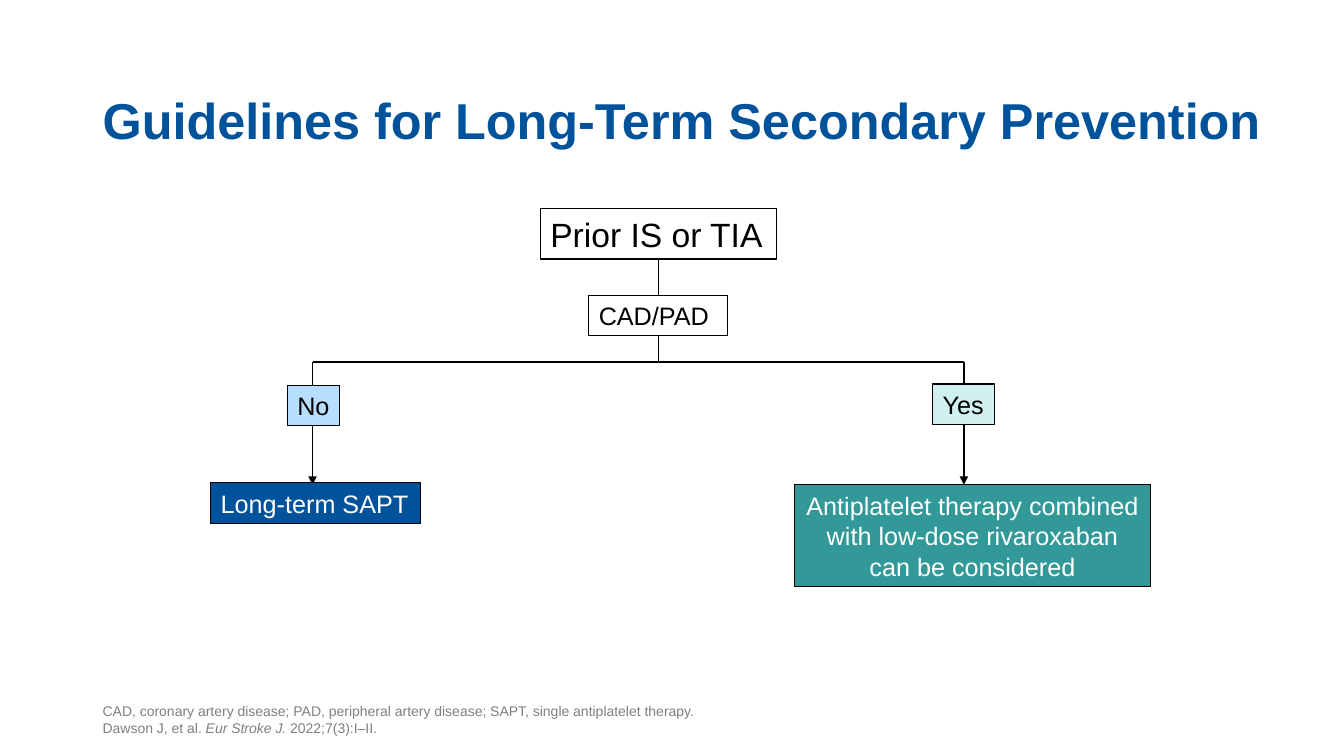
from lxml import etree
from pptx import Presentation
from pptx.dml.color import RGBColor as RGB
from pptx.enum.shapes import MSO_CONNECTOR as LINK, MSO_SHAPE as SHAPE
from pptx.enum.text import MSO_ANCHOR as ANCHOR, PP_ALIGN as ALIGN
from pptx.oxml.ns import qn
from pptx.util import Inches, Pt

BLUE = RGB(0x00, 0x53, 0x9B)
SKY = RGB(0xB8, 0xDE, 0xFF)
MINT = RGB(0xD1, 0xF0, 0xF0)
TEAL = RGB(0x33, 0x98, 0x98)
GRAY = RGB(0x80, 0x80, 0x80)
BLACK = RGB(0x00, 0x00, 0x00)
WHITE = RGB(0xFF, 0xFF, 0xFF)


def add_run(para, text, size, color, bold=False, italic=False):
    """Add one styled run to a paragraph."""
    run = para.add_run()
    run.text = text
    font = run.font
    font.name, font.size = "Arial", Pt(size)
    font.bold, font.italic = bold, italic
    font.color.rgb = color


def add_text(slide, box):
    """Add a wrapped text box anchored at its bottom and return its frame."""
    frame = slide.shapes.add_textbox(*map(Inches, box)).text_frame
    frame.word_wrap = True
    frame.vertical_anchor = ANCHOR.BOTTOM
    return frame


def add_title(slide, box):
    """Place the slide title."""
    para = add_text(slide, box).paragraphs[0]
    para.line_spacing = 0.9
    add_run(para, "Guidelines for Long-Term Secondary Prevention", 36, BLUE, bold=True)


def add_notes(slide, box):
    """Place the abbreviations and the citation."""
    frame = add_text(slide, box)
    add_run(frame.paragraphs[0], "CAD, coronary artery disease; PAD, peripheral artery disease; "
            "SAPT, single antiplatelet therapy.", 10, GRAY)
    cite = frame.add_paragraph()
    add_run(cite, "Dawson J, et al. ", 10, GRAY)
    add_run(cite, "Eur Stroke J. ", 10, GRAY, italic=True)
    add_run(cite, "2022;7(3):I–II.", 10, GRAY)


def add_node(slide, box, lines, fill, color, size=18, align=ALIGN.LEFT):
    """Draw one outlined box of the flow chart."""
    node = slide.shapes.add_shape(SHAPE.RECTANGLE, *map(Inches, box))
    node.shadow.inherit = False
    node.fill.solid()
    node.fill.fore_color.rgb = fill
    node.line.color.rgb = BLACK
    node.line.width = Pt(0.75)
    frame = node.text_frame
    frame.word_wrap = False
    for i, text in enumerate(lines):
        para = frame.add_paragraph() if i else frame.paragraphs[0]
        para.alignment = align
        add_run(para, text, size, color)
    return node


def add_line(slide, x1, y1, x2, y2, arrow=False):
    """Draw a straight black line, with an arrowhead if asked."""
    line = slide.shapes.add_connector(LINK.STRAIGHT, *map(Inches, (x1, y1, x2, y2)))
    line.line.color.rgb = BLACK
    line.line.width = Pt(1.25)
    if arrow:
        etree.SubElement(line.line._get_or_add_ln(), qn("a:tailEnd"), type="triangle")
    etree.SubElement(line._element.spPr, qn("a:effectLst"))
    return line


def add_flow(slide, box):
    """Draw the decision tree inside its box."""
    x, y, w, h = box
    mid, no, yes = x + 4.44, x + 1.01, x + 7.47
    bar, end = y + 1.52, y + 2.74
    for stem in (no, yes):
        add_line(slide, stem, bar, stem, end, arrow=True)
    trunk = add_line(slide, mid, y + 0.5, mid, bar)
    add_line(slide, no, bar, yes, bar)
    add_node(slide, (x, end - 0.02, 2.08, 0.4), ["Long-term SAPT"], BLUE, WHITE)
    add_node(slide, (no - 0.25, y + 1.75, 0.52, 0.4), ["No"], SKY, BLACK)
    add_node(slide, (yes - 0.31, y + 1.74, 0.61, 0.4), ["Yes"], MINT, BLACK)
    add_node(slide, (x + w - 3.53, end, 3.53, h - 2.74),
             ["Antiplatelet therapy combined", "with low-dose rivaroxaban", "can be considered"],
             TEAL, WHITE, align=ALIGN.CENTER)
    root = add_node(slide, (mid - 1.17, y, 2.34, 0.5), ["Prior IS or TIA"], WHITE, BLACK, 24)
    add_node(slide, (mid - 0.69, y + 0.86, 1.38, 0.4), ["CAD/PAD "], WHITE, BLACK)
    trunk.begin_connect(root, 2)


def main():
    """Build the slide and save it."""
    deck = Presentation()
    deck.slide_width, deck.slide_height = Inches(13.33), Inches(7.5)
    slide = deck.slides.add_slide(deck.slide_layouts[6])
    add_title(slide, (0.92, 0.33, 11.82, 1.21))
    add_flow(slide, (2.09, 2.07, 9.32, 3.75))
    add_notes(slide, (0.92, 6.95, 11.5, 0.4))
    deck.save("out.pptx")


if __name__ == "__main__":
    main()
